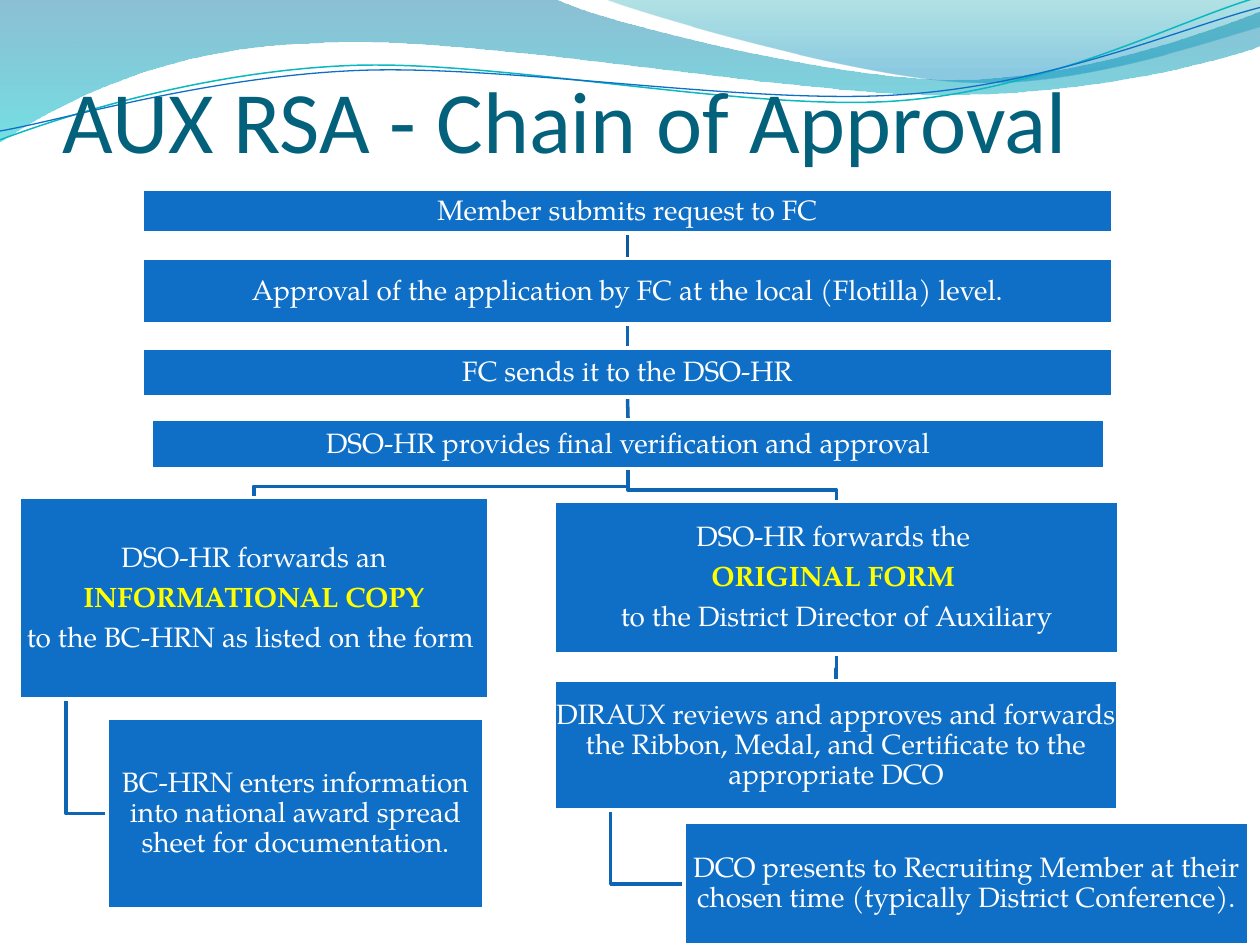
import math

import pptx
import pptx.dml.color
import pptx.enum.shapes
import pptx.enum.text
import pptx.oxml
import pptx.oxml.ns
import pptx.util
from pptx.util import Inches

COLORS = {
    "box": "0F6FC6", "link": "0E65B4", "first_link": "0C599F",
    "white": "FFFFFF", "accent": "FFFF00", "title": "04617B",
    "teal_line": "0AB8BF", "deep_blue": "0074A1", "cyan": "00C6CF",
    "teal": "00A1A9", "blue": "008BBF",
}
TITLE_FONT, BODY_FONT = "Calibri", "TeX Gyre Pagella"
RIPPLE_TILT = -2.7

# Each box: left, top, width, height, lines of text
BOXES = {
    "request": (1.13, 1.5, 7.7, 0.35, ["Member submits request to FC"]),
    "local": (1.13, 2.05, 7.7, 0.52,
              ["Approval of the application by FC at the local (Flotilla) level."]),
    "send": (1.13, 2.76, 7.7, 0.39, ["FC sends it to the DSO-HR"]),
    "verify": (1.2, 3.33, 7.57, 0.39,
               ["DSO-HR provides final verification and approval"]),
    "copy": (0.15, 3.95, 3.73, 1.6,
             ["DSO-HR forwards an", " INFORMATIONAL COPY ",
              "to the BC-HRN as listed on the form "]),
    "record": (0.85, 5.7, 2.99, 1.51,
               ["BC-HRN enters information into national award spread sheet "
                "for documentation."]),
    "form": (4.4, 3.98, 4.48, 1.21,
             ["DSO-HR forwards the ", "ORIGINAL FORM ",
              "to the District Director of Auxiliary"]),
    "review": (4.4, 5.4, 4.47, 1.03,
               ["DIRAUX reviews and approves and forwards the Ribbon, Medal, "
                "and Certificate to the appropriate DCO"]),
    "present": (5.43, 6.53, 4.48, 0.97,
                ["DCO presents to Recruiting Member at their chosen time "
                 "(typically District Conference)."]),
}
STRAIGHT_LINKS = [("request", "local", "first_link"), ("local", "send", "link"),
                  ("send", "verify", "link")]
BENT_LINKS = [("form", "review"), ("verify", "form"), ("verify", "copy")]
HANGING_LINKS = [("review", "present"), ("copy", "record")]

# Each wave: start point, then line ends (one point) or curves (three points)
BANDS = [
    ((0, 0),
     [[(4.4, -0.01)],
      [(4.76, 0.17), (6.64, 0.63), (7.58, 0.63)],
      [(8.53, 0.63), (9.58, 0.26), (10, 0.09)],
      [(10.01, 0.36)],
      [(9.83, 0.44), (8.7, 0.76), (7.46, 0.75)],
      [(6.22, 0.75), (3.82, 0.28), (2.57, 0.34)],
      [(1.29, 0.36), (0.46, 0.83), (-0.01, 1.13)]],
     [(0, "deep_blue", 45), (1, "cyan", 55)]),
    ((4.79, -0.01),
     [[(5.09, 0.11), (6.82, 0.62), (7.69, 0.65)],
      [(8.56, 0.69), (9.61, 0.32), (10, 0.21)],
      [(10, 0)]],
     [(0, "teal", 30), (0.8, "blue", 45)]),
]
# Each ripple: center of rotation, start, curves, color, width
RIPPLES = [
    ((4.99, 0.58), (0, 1.11),
     [[(0.48, 0.93), (1.58, 0.57), (2.77, 0.52)],
      [(3.95, 0.47), (5.93, 0.89), (7.13, 0.8)],
      [(8.33, 0.71), (9.38, 0.15), (9.98, -0.02)]], "teal_line", 0.85),
    ((5, 0.59), (0, 1.04),
     [[(0.47, 0.96), (1.64, 0.61), (2.83, 0.56)],
      [(4.03, 0.51), (5.97, 0.84), (7.17, 0.75)],
      [(8.36, 0.67), (9.41, 0.21), (10, 0.06)]], "box", 0.75),
]


def rgb(name):
    return pptx.dml.color.RGBColor.from_string(COLORS[name])


def make_node(tag, attributes=""):
    return pptx.oxml.parse_xml(f'<a:{tag} {pptx.oxml.ns.nsdecls("a")} {attributes}/>')


def set_line(shape, color, width):
    shape.line.color.rgb = rgb(color)
    shape.line.width = pptx.util.Pt(width)


def turn(point, center, degrees):
    """Rotate a point clockwise about a center."""
    dx, dy = point[0] - center[0], point[1] - center[1]
    cos, sin = math.cos(math.radians(degrees)), math.sin(math.radians(degrees))
    return center[0] + dx * cos - dy * sin, center[1] + dx * sin + dy * cos


def add_outline(page, start, segments, close=False):
    """Freeform whose three-point segments are cubic curves."""
    builder = page.shapes.build_freeform(*map(Inches, start))
    points = [(Inches(x), Inches(y)) for segment in segments for x, y in segment]
    builder.add_line_segments(points, close=close)
    shape = builder.convert_to_shape()
    shape.shadow.inherit = False
    steps = iter(list(shape.element.spPr.iter(pptx.oxml.ns.qn("a:lnTo"))))
    for segment in segments:
        parts = [next(steps) for _ in segment]
        if len(parts) == 3:
            curve = make_node("cubicBezTo")
            parts[0].addprevious(curve)
            for part in parts:
                curve.append(part[0])
                part.getparent().remove(part)
    return shape


def add_open_line(page, start, segments, color, width):
    shape = add_outline(page, start, segments)
    shape.fill.background()
    set_line(shape, color, width)
    return shape


def add_band(page, start, segments, stops):
    shape = add_outline(page, start, segments, close=True)
    shape.line.fill.background()
    shape.fill.gradient()
    shape.fill.gradient_angle = 270
    for stop, (position, color, _) in zip(shape.fill.gradient_stops, stops):
        stop.position = position
        stop.color.rgb = rgb(color)
    color_tag = pptx.oxml.ns.qn("a:srgbClr")
    for node, (_, _, opacity) in zip(shape.element.spPr.iter(color_tag), stops):
        node.append(make_node("alpha", f'val="{opacity * 1000}"'))


def add_ripple(page, center, start, segments, color, width):
    """Curve laid out level, then tilted as a whole."""
    level = [[turn(point, center, -RIPPLE_TILT) for point in segment]
             for segment in segments]
    shape = add_open_line(page, turn(start, center, -RIPPLE_TILT), level, color, width)
    shape.rotation = RIPPLE_TILT


def write_text(shape, lines, *, size, font, color, align, anchor,
               insets, spacing=1.0, after=0):
    """Fill a shape with paragraphs; the middle one of three is highlighted."""
    frame = shape.text_frame
    frame.word_wrap = True
    frame.vertical_anchor = anchor
    (frame.margin_left, frame.margin_top,
     frame.margin_right, frame.margin_bottom) = map(Inches, insets)
    for index, line in enumerate(lines):
        para = frame.add_paragraph() if index else frame.paragraphs[0]
        para.alignment = align
        para.line_spacing = spacing
        para.space_after = pptx.util.Pt(after)
        span = para.add_run()
        span.text = line
        highlighted = len(lines) == 3 and index == 1
        span.font.size = pptx.util.Pt(size)
        span.font.name = font
        span.font.bold = highlighted
        span.font.color.rgb = rgb("accent" if highlighted else color)


def add_title(page, text):
    box = page.shapes.add_textbox(Inches(0.5), Inches(0.42), Inches(9), Inches(0.94))
    write_text(box, [text], size=50, font=TITLE_FONT, color="title",
               align=pptx.enum.text.PP_ALIGN.LEFT,
               anchor=pptx.enum.text.MSO_ANCHOR.BOTTOM, insets=(0, 0.05, 0, 0))


def add_box(page, left, top, width, height, lines):
    box = page.shapes.add_shape(pptx.enum.shapes.MSO_SHAPE.RECTANGLE,
                                *map(Inches, (left, top, width, height)))
    box.shadow.inherit = False
    box.fill.solid()
    box.fill.fore_color.rgb = rgb("box")
    set_line(box, "white", 2)
    write_text(box, lines, size=16, font=BODY_FONT, color="white",
               align=pptx.enum.text.PP_ALIGN.CENTER,
               anchor=pptx.enum.text.MSO_ANCHOR.MIDDLE,
               insets=(0.01,) * 4, spacing=0.9, after=5.6)
    return box


def add_bent_link(page, parent, child):
    """Line from the bottom of one box, bending just above the top of another."""
    left, top, width, height, _ = BOXES[parent]
    start_x, start_y = left + width / 2, top + height
    left, end_y, width, _, _ = BOXES[child]
    end_x, bend_y = left + width / 2, end_y - 0.09
    corners = [(start_x, bend_y), (end_x, bend_y), (end_x, end_y)]
    add_open_line(page, (start_x, start_y), [[point] for point in corners], "link", 2)


def add_hanging_link(page, parent, child):
    """Line down from a tenth of one box's width, then to another's left side."""
    left, top, width, height, _ = BOXES[parent]
    start_x = left + width / 10
    end_x, child_top, _, child_height, _ = BOXES[child]
    end_y = child_top + child_height / 2
    add_open_line(page, (start_x, top + height),
                  [[(start_x, end_y)], [(end_x, end_y)]], "link", 2)


def add_straight_link(page, parent, child, color, front):
    """Connector joined bottom to top, placed behind the front shape."""
    link = page.shapes.add_connector(pptx.enum.shapes.MSO_CONNECTOR.STRAIGHT, 0, 0, 0, 0)
    link.begin_connect(parent, 2)
    link.end_connect(child, 0)
    set_line(link, color, 2)
    link.element.spPr.append(make_node("effectLst"))
    front.element.addprevious(link.element)


def main():
    deck = pptx.Presentation()
    deck.slide_width, deck.slide_height = Inches(10), Inches(7.5)
    page = deck.slides.add_slide(deck.slide_layouts[6])
    for band in BANDS:
        add_band(page, *band)
    for ripple in RIPPLES:
        add_ripple(page, *ripple)
    add_title(page, "AUX RSA - Chain of Approval")
    for parent, child in HANGING_LINKS:
        add_hanging_link(page, parent, child)
    for parent, child in BENT_LINKS:
        add_bent_link(page, parent, child)
    boxes = {name: add_box(page, *box) for name, box in BOXES.items()}
    for parent, child, color in STRAIGHT_LINKS:
        add_straight_link(page, boxes[parent], boxes[child], color, boxes["request"])
    deck.save("out.pptx")


if __name__ == "__main__":
    main()
